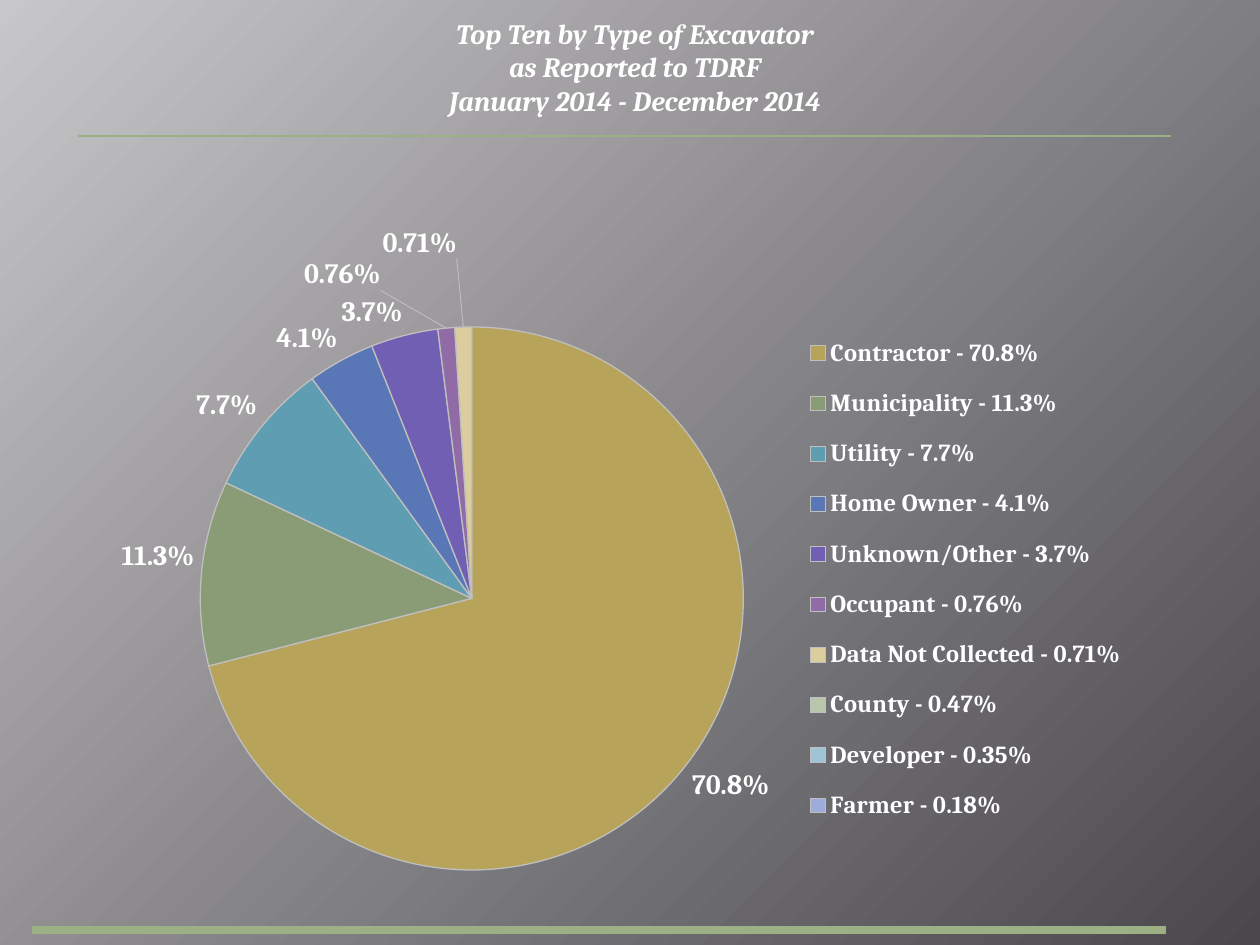
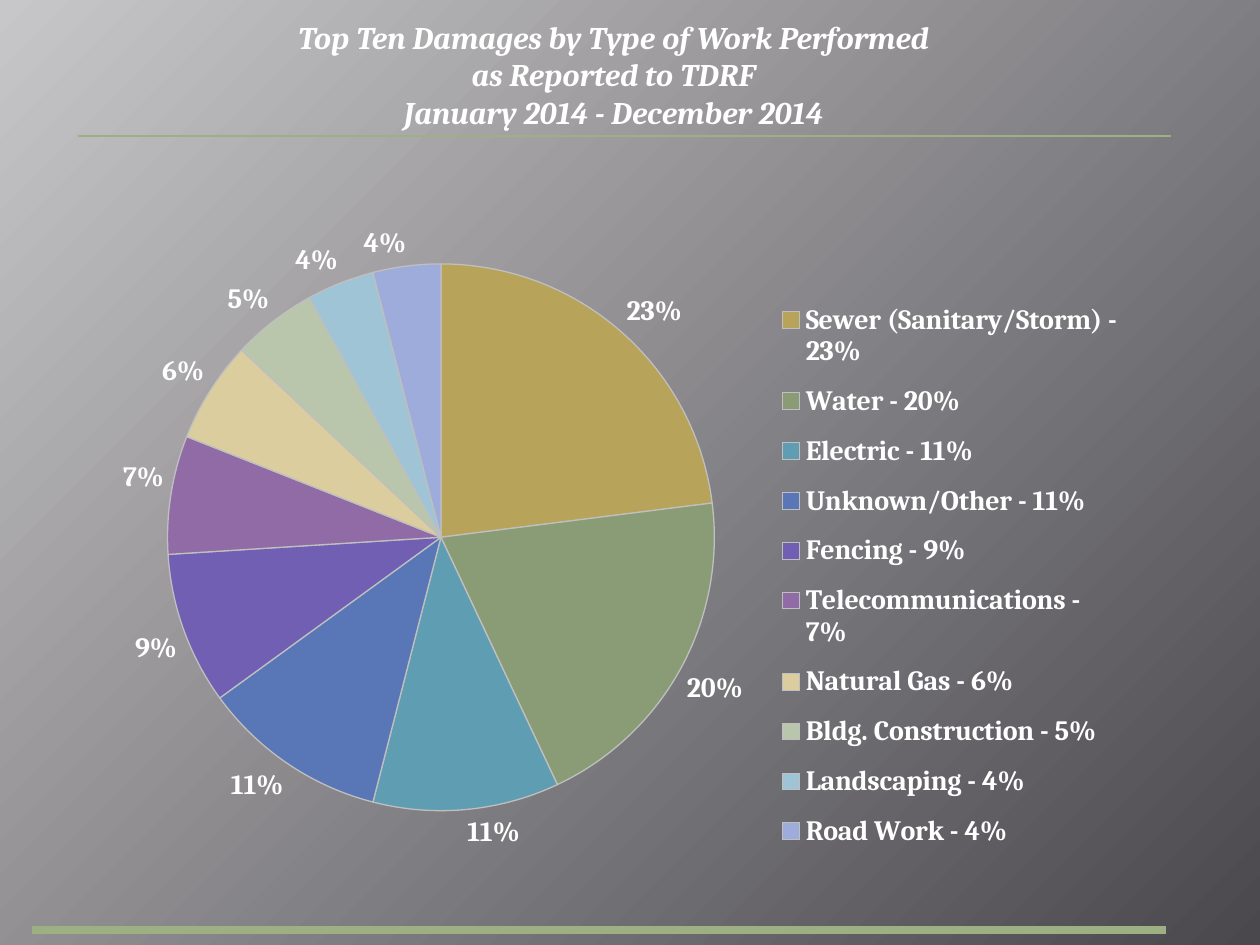
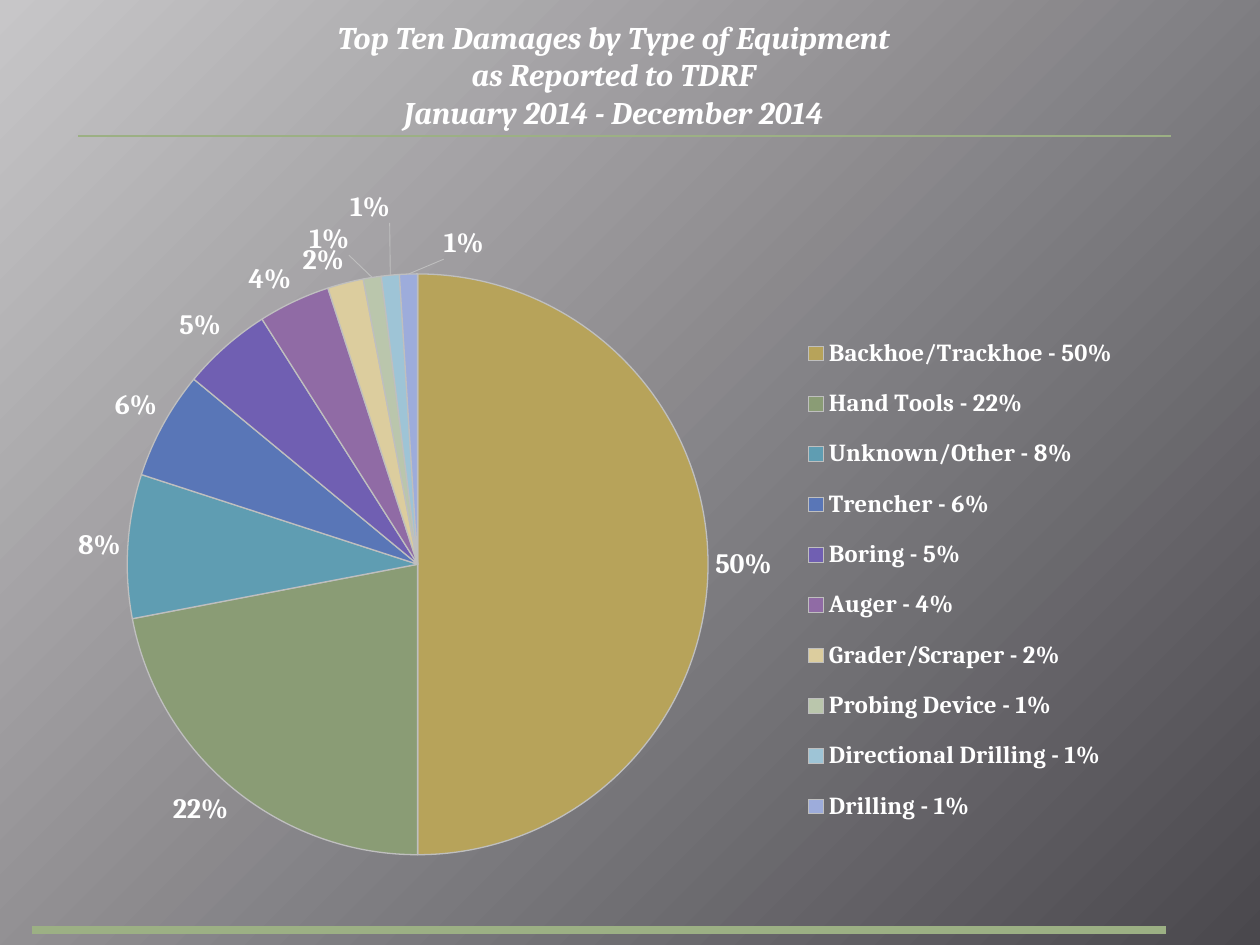
import pptx
import pptx.chart.data
import pptx.dml.color
import pptx.enum.chart
import pptx.enum.shapes
import pptx.enum.text
import pptx.oxml
import pptx.oxml.ns
import pptx.util

Inches, Pt = pptx.util.Inches, pptx.util.Pt
qn = pptx.oxml.ns.qn

THEME = {
    "font": "Cambria",
    "text": "FFFFFF",
    "rule": "9CB084",
    "edge": "BFBFBF",
    "background": ("C7C6C8", "4A484D"),
    "slices": ("B7A35A", "8A9C75", "5F9DB2", "5976B7", "705FB2",
               "906BA5", "DCCD9E", "BAC6AC", "9EC4D6", "9DACDB"),
    "chart_size": 10,
    "label_size": 16,
}

SUBTITLE = ("as Reported to TDRF", "January 2014 - December 2014")
RULES = ((0.62, 9.29, 1.08, 0.75), (0.25, 9.25, 7.38, 4.75))

SLIDES = [
    {
        "title": "Top Ten by Type of Excavator",
        "title_box": (0.08, 0.08, 9.92, 0.91),
        "title_size": 16,
        "anchor": "TOP",
        "chart_box": (0.5, 1.2, 8.62, 6.05),
        "plot": (1.09, 1.14, 4.31, 5),
        "legend": (5.83, 1.32, 2.67, 4.16),
        "legend_size": 14,
        "data": [("Contractor", "70.8%"), ("Municipality", "11.3%"),
                 ("Utility", "7.7%"), ("Home Owner", "4.1%"),
                 ("Unknown/Other", "3.7%"), ("Occupant", "0.76%"),
                 ("Data Not Collected", "0.71%"), ("County", "0.47%"),
                 ("Developer", "0.35%"), ("Farmer", "0.18%")],
        "written_labels": True,
        "offsets": {5: (-0.06, -0.04), 6: (-0.04, -0.08), 7: (0.03, -0.08),
                    8: (0.03, -0.03), 9: (0.06, 0)},
    },
    {
        "title": "Top Ten Damages by Type of Work Performed",
        "title_box": (0.62, 0.09, 8.5, 1),
        "title_size": 18,
        "anchor": "MIDDLE",
        "chart_box": (0.33, 1.17, 8.67, 6.08),
        "plot": (1, 0.61, 4.34, 4.97),
        "legend": (5.87, 1.1, 2.68, 4.6),
        "legend_size": 16,
        "data": [("Sewer (Sanitary/Storm)", "23%"), ("Water", "20%"),
                 ("Electric", "11%"), ("Unknown/Other", "11%"),
                 ("Fencing", "9%"), ("Telecommunications", "7%"),
                 ("Natural Gas", "6%"), ("Bldg. Construction", "5%"),
                 ("Landscaping", "4%"), ("Road Work", "4%")],
        "written_labels": False,
        "offsets": {},
    },
    {
        "title": "Top Ten Damages by Type of Equipment",
        "title_box": (0.62, 0.09, 8.5, 1),
        "title_size": 18,
        "anchor": "MIDDLE",
        "chart_box": (0.33, 1.25, 8.78, 5.96),
        "plot": (0.68, 0.86, 4.61, 4.74),
        "legend": (5.98, 1.27, 2.63, 4.17),
        "legend_size": 14,
        "data": [("Backhoe/Trackhoe", "50%"), ("Hand Tools", "22%"),
                 ("Unknown/Other", "8%"), ("Trencher", "6%"),
                 ("Boring", "5%"), ("Auger", "4%"),
                 ("Grader/Scraper", "2%"), ("Probing Device", "1%"),
                 ("Directional Drilling", "1%"), ("Drilling", "1%")],
        "written_labels": False,
        "offsets": {7: (-0.02, -0.02), 8: (0, -0.06), 9: (0.05, -0.01)},
    },
]


def rgb(value):
    return pptx.dml.color.RGBColor.from_string(value)


def format_font(font, size, **values):
    for name, value in {"name": THEME["font"], "size": Pt(size), **values}.items():
        setattr(font, name, value)
    font.color.rgb = rgb(THEME["text"])


def set_background(master):
    fill = master.background.fill
    fill.gradient()
    for stop, color in zip(fill.gradient_stops, THEME["background"]):
        stop.color.rgb = rgb(color)
    grad = next(master.element.iter(qn("a:gradFill")))
    for lin in grad.findall(qn("a:lin")):
        grad.remove(lin)
    grad.append(pptx.oxml.parse_xml(
        f'<a:path {pptx.oxml.ns.nsdecls("a")} path="circle">'
        '<a:fillToRect l="0" t="0" r="100000" b="100000"/></a:path>'))


def add_title(slide, item):
    sp = slide.shapes.title
    sp.left, sp.top, sp.width, sp.height = map(Inches, item["title_box"])
    tf = sp.text_frame
    tf.word_wrap = True
    tf.auto_size = pptx.enum.text.MSO_AUTO_SIZE.NONE
    tf.vertical_anchor = getattr(pptx.enum.text.MSO_ANCHOR, item["anchor"])
    tf.text = "\n".join((item["title"], *SUBTITLE))
    for p in tf.paragraphs:
        p.alignment = pptx.enum.text.PP_ALIGN.CENTER
        format_font(p.runs[0].font, item["title_size"], bold=True, italic=True)


def add_rules(slide):
    for left, right, y, width in RULES:
        line = slide.shapes.add_connector(
            pptx.enum.shapes.MSO_CONNECTOR.STRAIGHT,
            Inches(left), Inches(y), Inches(right), Inches(y))
        line.line.color.rgb = rgb(THEME["rule"])
        line.line.width = Pt(width)
        line._element.spPr.append(
            pptx.oxml.parse_xml(f'<a:effectLst {pptx.oxml.ns.nsdecls("a")}/>'))


def place(parent, index, values, inner=False, edge=True):
    for old in parent.findall(qn("c:layout")):
        parent.remove(old)
    target = '<c:layoutTarget val="inner"/>' if inner else ""
    modes = '<c:xMode val="edge"/><c:yMode val="edge"/>' if edge else ""
    sizes = "".join(f'<c:{tag} val="{value}"/>' for tag, value in zip("xywh", values))
    parent.insert(index, pptx.oxml.parse_xml(
        f'<c:layout {pptx.oxml.ns.nsdecls("c")}><c:manualLayout>'
        f'{target}{modes}{sizes}</c:manualLayout></c:layout>'))


def chart_fractions(box, item):
    return [length / total for length, total in zip(box, item["chart_box"][2:] * 2)]


def label_slices(series, item):
    outside = pptx.enum.chart.XL_LABEL_POSITION.OUTSIDE_END
    labels = series.data_labels
    for name, value in {"show_percentage": True, "show_value": False,
                        "number_format": "0%", "number_format_is_linked": False,
                        "position": outside}.items():
        setattr(labels, name, value)
    format_font(labels.font, THEME["label_size"], bold=True)

    for i, (_, text) in enumerate(item["data"]):
        if not item["written_labels"] and i not in item["offsets"]:
            continue
        label = series.points[i].data_label
        if item["written_labels"]:
            r = label.text_frame.paragraphs[0].add_run()
            r.text = text
            font = r.font
        else:
            font = label.font
        format_font(font, THEME["label_size"], bold=True)
        label.position = outside

    dLbls = series._element.find(qn("c:dLbls"))
    for dLbl in dLbls.findall(qn("c:dLbl")):
        dLbl.find(qn("c:showVal")).set("val", "0")
        dLbl.find(qn("c:showPercent")).set("val", "1")
        i = int(dLbl.find(qn("c:idx")).get("val"))
        if i in item["offsets"]:
            place(dLbl, 1, item["offsets"][i], edge=False)
    for tag in ("c:showLeaderLines", "c:leaderLines"):
        for old in dLbls.findall(qn(tag)):
            dLbls.remove(old)
    ns = pptx.oxml.ns.nsdecls("c", "a")
    dLbls.append(pptx.oxml.parse_xml(f'<c:showLeaderLines {ns} val="1"/>'))
    dLbls.append(pptx.oxml.parse_xml(
        f'<c:leaderLines {ns}><c:spPr><a:ln w="6350"><a:solidFill>'
        f'<a:srgbClr val="{THEME["edge"]}"/></a:solidFill></a:ln></c:spPr></c:leaderLines>'))


def add_pie(slide, item):
    data = pptx.chart.data.CategoryChartData()
    data.categories = [f"{name} - {share}" for name, share in item["data"]]
    data.add_series("Series 1", [round(float(share.rstrip("%"))) for _, share in item["data"]])
    chart = slide.shapes.add_chart(
        pptx.enum.chart.XL_CHART_TYPE.PIE, *map(Inches, item["chart_box"]), data).chart
    chart.has_title = False
    format_font(chart.font, THEME["chart_size"])

    plot = chart.plots[0]
    plot.vary_by_categories = True
    series = plot.series[0]
    for i, color in enumerate(THEME["slices"]):
        part = series.points[i].format
        part.fill.solid()
        part.fill.fore_color.rgb = rgb(color)
        part.line.color.rgb = rgb(THEME["edge"])
        part.line.width = Pt(0.75)
    label_slices(series, item)

    chart.has_legend = True
    legend = chart.legend
    legend.position = pptx.enum.chart.XL_LEGEND_POSITION.RIGHT
    legend.include_in_layout = False
    format_font(legend.font, item["legend_size"], bold=True)
    place(legend._element, 1, chart_fractions(item["legend"], item))
    place(next(chart._chartSpace.iter(qn("c:plotArea"))), 0,
          chart_fractions(item["plot"], item), inner=True)


def main():
    prs = pptx.Presentation()
    prs.slide_width, prs.slide_height = Inches(10), Inches(7.5)
    set_background(prs.slide_master)
    for item in SLIDES:
        slide = prs.slides.add_slide(prs.slide_layouts.get_by_name("Title Only"))
        add_title(slide, item)
        add_rules(slide)
        add_pie(slide, item)
    prs.save("out.pptx")


if __name__ == "__main__":
    main()
